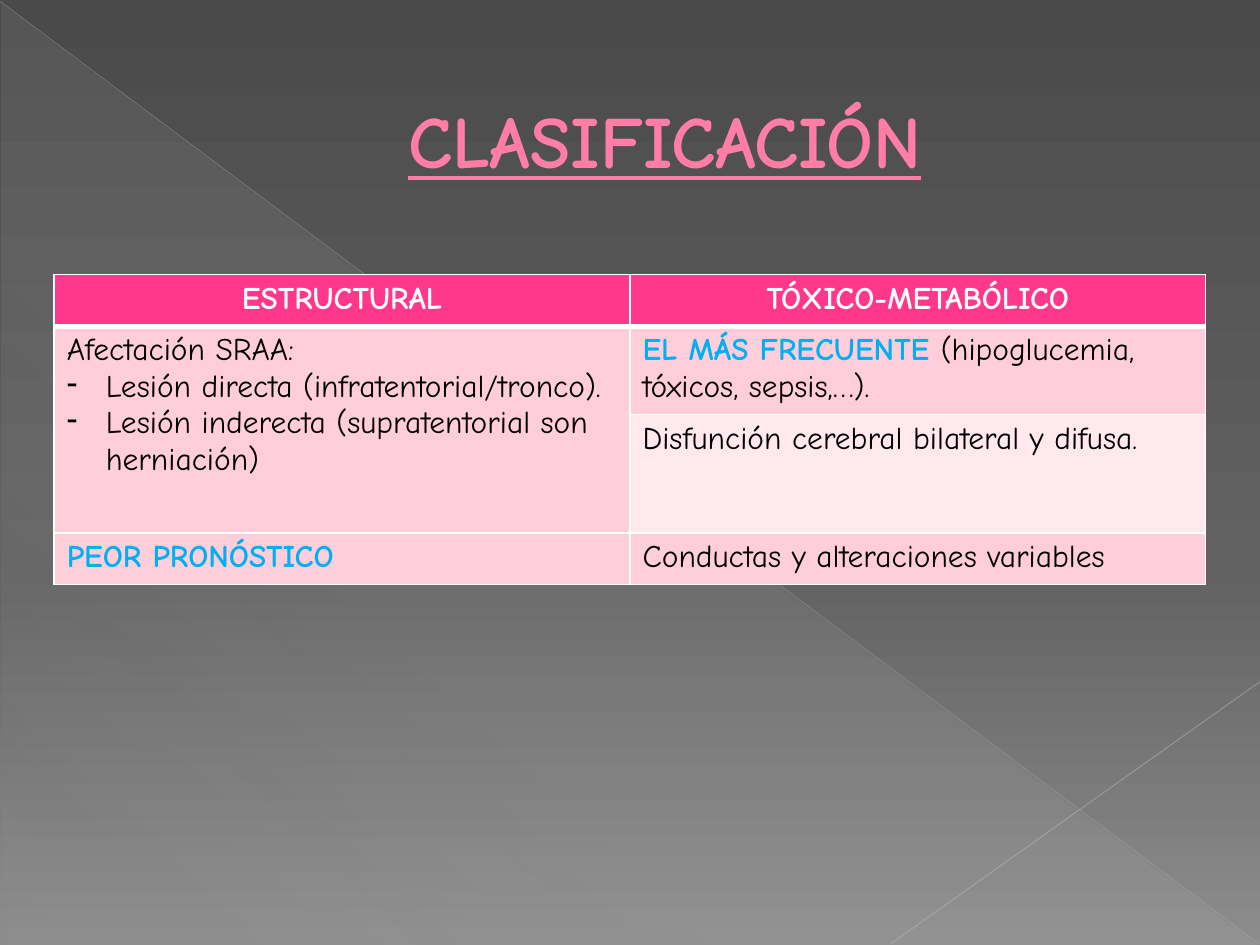
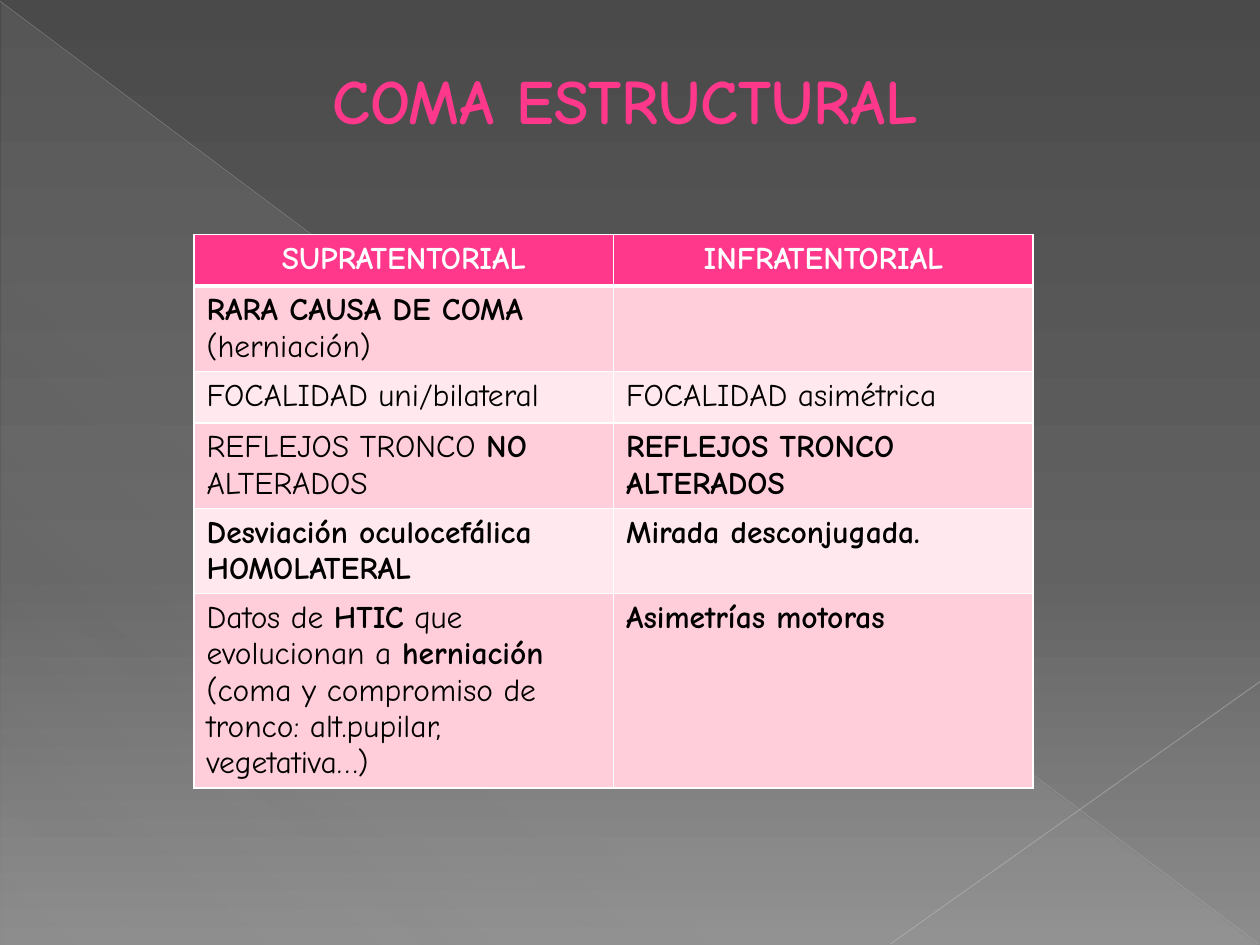
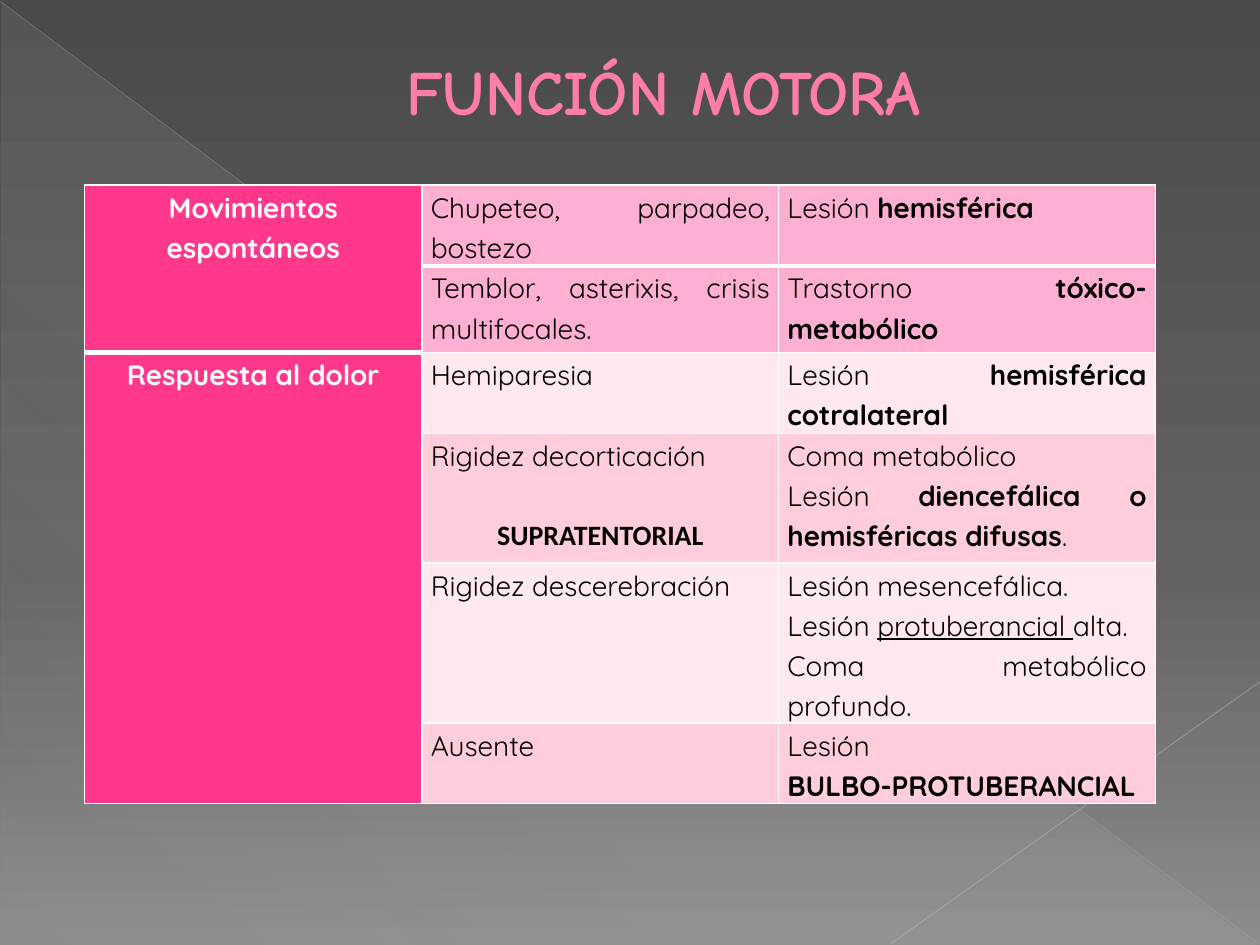
"""Build three slides on the classification of coma and motor function."""
from dataclasses import dataclass

from lxml import etree
from pptx import Presentation
from pptx.dml.color import RGBColor
from pptx.enum.shapes import MSO_CONNECTOR, MSO_SHAPE
from pptx.enum.text import MSO_ANCHOR, MSO_AUTO_SIZE, PP_ALIGN
from pptx.oxml.ns import qn
from pptx.util import Inches, Pt

STRAIGHT = MSO_CONNECTOR.STRAIGHT
TRIANGLE = MSO_SHAPE.RIGHT_TRIANGLE
LEFT, CENTER, JUSTIFY = PP_ALIGN.LEFT, PP_ALIGN.CENTER, PP_ALIGN.JUSTIFY
MIDDLE, TOP = MSO_ANCHOR.MIDDLE, MSO_ANCHOR.TOP
GROW = MSO_AUTO_SIZE.SHAPE_TO_FIT_TEXT

COLORS = {
    "white": "FFFFFF", "black": "000000", "blue": "00B0F0",
    "header": "FF388C", "title": "FF7DA7", "title_edge": "B12761",
    "strong": "FFAFD1", "band": "FFCEDA", "pale": "FFE8EE",
    "veil": "D2D2D2", "diagonal": "BFBFBF", "corner": "C6C6C6",
    "sky": "4A4A4A", "middle": "626262", "ground": "8C8C8C",
}
BACKGROUND_STOPS = [(0, "sky", 100), (60, "middle", 100), (100, "ground", 100)]
VEIL_STOPS = [(0, "veil", 10), (70, "veil", 8), (100, "veil", 1)]


@dataclass
class Run:
    text: str
    bold: bool = False
    underline: bool = False
    color: str = "black"
    font: str = ""


@dataclass
class Paragraph:
    runs: list
    align: object = None
    bullet: str = ""
    before: int = 0


@dataclass
class Cell:
    paragraphs: list
    header: bool = False


def bold(text, **style):
    return Run(text, bold=True, **style)


def line(*runs, **layout):
    return Paragraph([Run(run) if isinstance(run, str) else run for run in runs], **layout)


def body(*runs):
    return Cell([line(*runs)])


def heading(text):
    return Cell([line(bold(text, color="white"), align=CENTER)], header=True)


def rgb(name):
    return RGBColor.from_string(COLORS[name])


def add_color(parent, name, opacity=100):
    color = etree.SubElement(parent, qn("a:srgbClr"), val=COLORS[name])
    if opacity < 100:
        etree.SubElement(color, qn("a:alpha"), val=str(opacity * 1000))


def set_gradient(owner, stops, angle):
    gradient = owner.find(".//" + qn("a:gradFill"))
    for child in list(gradient):
        gradient.remove(child)
    stop_list = etree.SubElement(gradient, qn("a:gsLst"))
    for position, name, opacity in stops:
        stop = etree.SubElement(stop_list, qn("a:gs"), pos=str(position * 1000))
        add_color(stop, name, opacity)
    etree.SubElement(gradient, qn("a:lin"), ang=str(angle * 60000), scaled="0")


def make_line(tag, name, width):
    outline = etree.Element(qn(tag), w=str(Pt(width)))
    add_color(etree.SubElement(outline, qn("a:solidFill")), name)
    return outline


class Deck:
    """Hold the shared style and the current slide."""

    def __init__(self):
        self.presentation = Presentation()
        self.presentation.slide_width = Inches(10)
        self.presentation.slide_height = Inches(7.5)
        self.slide = None

    def new_slide(self):
        self.slide = self.presentation.slides.add_slide(self.presentation.slide_layouts[6])
        self.slide.background.fill.gradient()
        set_gradient(self.slide.element, BACKGROUND_STOPS, 90)
        self.veil(0.01, 0.02, 9.98, 7.48)
        self.rule((0, 0.01), (9.99, 7.49), "diagonal", 0.39, 35)
        self.rule((10, 5.41), (7.07, 7.49), "corner", 0.47, 45)

    def veil(self, *box):
        shape = self.slide.shapes.add_shape(TRIANGLE, *map(Inches, box))
        shape.shadow.inherit = False
        shape.line.fill.background()
        shape.fill.gradient()
        set_gradient(shape.element, VEIL_STOPS, 133)

    def rule(self, start, end, color, width, opacity):
        connector = self.slide.shapes.add_connector(STRAIGHT, *map(Inches, start + end))
        connector.line.width = Pt(width)
        connector.line.color.rgb = rgb(color)
        srgb = connector.element.find(".//" + qn("a:srgbClr"))
        etree.SubElement(srgb, qn("a:alpha"), val=str(opacity * 1000))
        etree.SubElement(connector.element.spPr, qn("a:effectLst"))

    def add_text(self, frame, paragraphs, size, font, align=LEFT, spacing=None):
        for index, content in enumerate(paragraphs):
            paragraph = frame.add_paragraph() if index else frame.paragraphs[0]
            paragraph.alignment = content.align or align
            paragraph.space_before = Pt(content.before)
            if spacing:
                paragraph.line_spacing = spacing
            if content.bullet:
                properties = paragraph._p.get_or_add_pPr()
                properties.set("marL", str(Inches(0.31)))
                properties.set("indent", str(-Inches(0.31)))
                etree.SubElement(properties, qn("a:buChar"), char=content.bullet)
            for piece in content.runs:
                run = paragraph.add_run()
                run.text = piece.text
                run.font.size = Pt(size)
                run.font.name = piece.font or font
                run.font.bold = piece.bold
                run.font.underline = piece.underline
                run.font.color.rgb = rgb(piece.color)

    def title(self, text, box, size=36, color="title", underline=False, outlined=True):
        shape = self.slide.shapes.add_textbox(*map(Inches, box))
        frame = shape.text_frame
        frame.word_wrap = True
        run = bold(text, color=color, underline=underline)
        self.add_text(frame, [line(run, align=CENTER)], size, "Comic Neue")
        if outlined:
            frame.vertical_anchor = MIDDLE
            paragraph = frame.paragraphs[0]
            paragraph._p.get_or_add_pPr().set("marL", str(Inches(0.53)))
            properties = paragraph.runs[0]._r.get_or_add_rPr()
            properties.insert(0, make_line("a:ln", "title_edge", 0.5))
        else:
            frame.auto_size = GROW

    def table(self, origin, widths, heights, fills, rows, merges=(), thick=(),
              size=18, font="Comic Neue", margins=(0.1, 0.05), align=LEFT, spacing=None):
        box = (*origin, sum(widths), sum(heights))
        frame = self.slide.shapes.add_table(len(rows), len(widths), *map(Inches, box))
        table = frame.table
        table.first_row = table.horz_banding = False
        for column, width in zip(table.columns, widths):
            column.width = Inches(width)
        for row, height in zip(table.rows, heights):
            row.height = Inches(height)
        for row_index, (row, fill) in enumerate(zip(rows, fills)):
            for column_index, content in enumerate(row):
                cell = table.cell(row_index, column_index)
                header = content is not None and content.header
                cell.fill.solid()
                cell.fill.fore_color.rgb = rgb("header" if header else fill)
                heavy = row_index == 0 or (row_index, column_index) in thick
                self.borders(cell, row_index == 0, 3 if heavy else 1)
                cell.vertical_anchor = TOP
                cell.margin_left = cell.margin_right = Inches(margins[0])
                cell.margin_top = cell.margin_bottom = Inches(margins[1])
                if content:
                    self.add_text(cell.text_frame, content.paragraphs, size, font, align, spacing)
        for first, last in merges:
            table.cell(*first).merge(table.cell(*last))

    def borders(self, cell, top, bottom_width):
        widths = {"a:lnL": 1, "a:lnR": 1}
        if top:
            widths["a:lnT"] = 1
        widths["a:lnB"] = bottom_width
        properties = cell._tc.get_or_add_tcPr()
        for index, (tag, width) in enumerate(widths.items()):
            properties.insert(index, make_line(tag, "white", width))


def classification(deck):
    deck.new_slide()
    deck.title("CLASIFICACIÓN", (0.51, 0.52, 9, 1.17), size=42, underline=True)
    rows = [
        [heading("ESTRUCTURAL"), heading("TÓXICO-METABÓLICO")],
        [Cell([line("Afectación SRAA:"),
               line("Lesión directa (infratentorial/tronco).", bullet="-"),
               line("Lesión inderecta (supratentorial son herniación)", bullet="-")]),
         body(bold("EL MÁS FRECUENTE ", color="blue"), "(hipoglucemia, tóxicos, sepsis,…).")],
        [None, body("Disfunción cerebral bilateral y difusa.")],
        [body(bold("PEOR PRONÓSTICO", color="blue")), body("Conductas y alteraciones variables")],
    ]
    deck.table((0.43, 2.18), [4.57] * 2, [0.41, 0.67, 0.94, 0.41],
               ["header", "band", "pale", "band"], rows, merges=[((1, 0), (2, 0))])


def structural_coma(deck):
    deck.new_slide()
    rows = [
        [heading("SUPRATENTORIAL"), heading("INFRATENTORIAL")],
        [body(bold("RARA CAUSA DE COMA "), "(herniación)"), None],
        [body("FOCALIDAD uni/bilateral"), body("FOCALIDAD asimétrica")],
        [body("REFLEJOS TRONCO ", bold("NO "), "ALTERADOS"),
         body(bold("REFLEJOS TRONCO ALTERADOS"))],
        [body(bold("Desviación oculocefálica HOMOLATERAL")), body(bold("Mirada desconjugada."))],
        [body("Datos de ", bold("HTIC"), " que evolucionan a ", bold("herniación "),
              "(coma y compromiso de tronco: alt.pupilar, vegetativa…)"),
         body(bold("Asimetrías motoras"))],
    ]
    deck.table((1.54, 1.86), [3.33] * 2, [0.41, 0.67, 0.41, 0.67, 0.67, 1.54],
               ["header", "band", "pale", "band", "pale", "band"], rows)
    deck.title("COMA ESTRUCTURAL", (1.3, 0.44, 7.32, 0.71), color="header", outlined=False)


def motor_function(deck):
    deck.new_slide()
    deck.title("FUNCIÓN MOTORA", (0.5, 0.29, 9, 0.86))
    rows = [
        [heading("Movimientos espontáneos"), body("Chupeteo, parpadeo, bostezo"),
         body("Lesión ", bold("hemisférica"))],
        [None, body("Temblor, asterixis, crisis multifocales."),
         body("Trastorno ", bold("tóxico-metabólico"))],
        [heading("Respuesta al dolor"), body("Hemiparesia"),
         body("Lesión ", bold("hemisférica cotralateral"))],
        [None,
         Cell([line("Rigidez decorticación"),
               line(bold("SUPRATENTORIAL", font="Calibri"), align=CENTER, before=23)]),
         Cell([line("Coma metabólico"),
               line("Lesión ", bold("diencefálica o hemisféricas difusas"), ".")])],
        [None, body("Rigidez descerebración"),
         Cell([line("Lesión mesencefálica."),
               line("Lesión ", Run("protuberancial ", underline=True), "alta."),
               line("Coma metabólico profundo.")])],
        [None, body("Ausente"),
         Cell([line("Lesión "), line(bold("BULBO-PROTUBERANCIAL"))])],
    ]
    deck.table((0.67, 1.47), [2.68, 2.83, 2.99], [0.64, 0.69, 0.64, 1.03, 1.27, 0.64],
               ["strong", "strong", "pale", "band", "pale", "band"], rows,
               merges=[((0, 0), (1, 0)), ((2, 0), (5, 0))], thick={(1, 0)},
               size=16, font="Quicksand", margins=(0.07, 0), align=JUSTIFY, spacing=1.15)


def main():
    deck = Deck()
    classification(deck)
    structural_coma(deck)
    motor_function(deck)
    deck.presentation.save("out.pptx")


if __name__ == "__main__":
    main()
